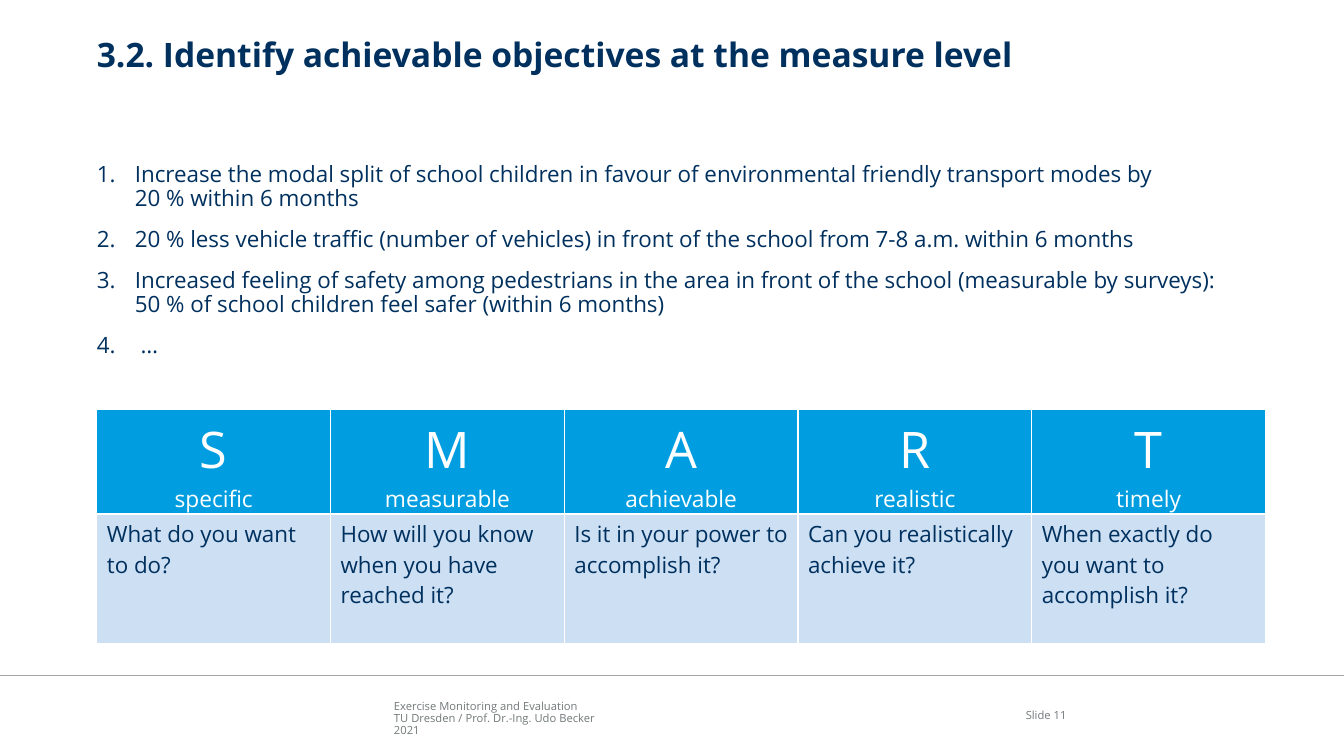
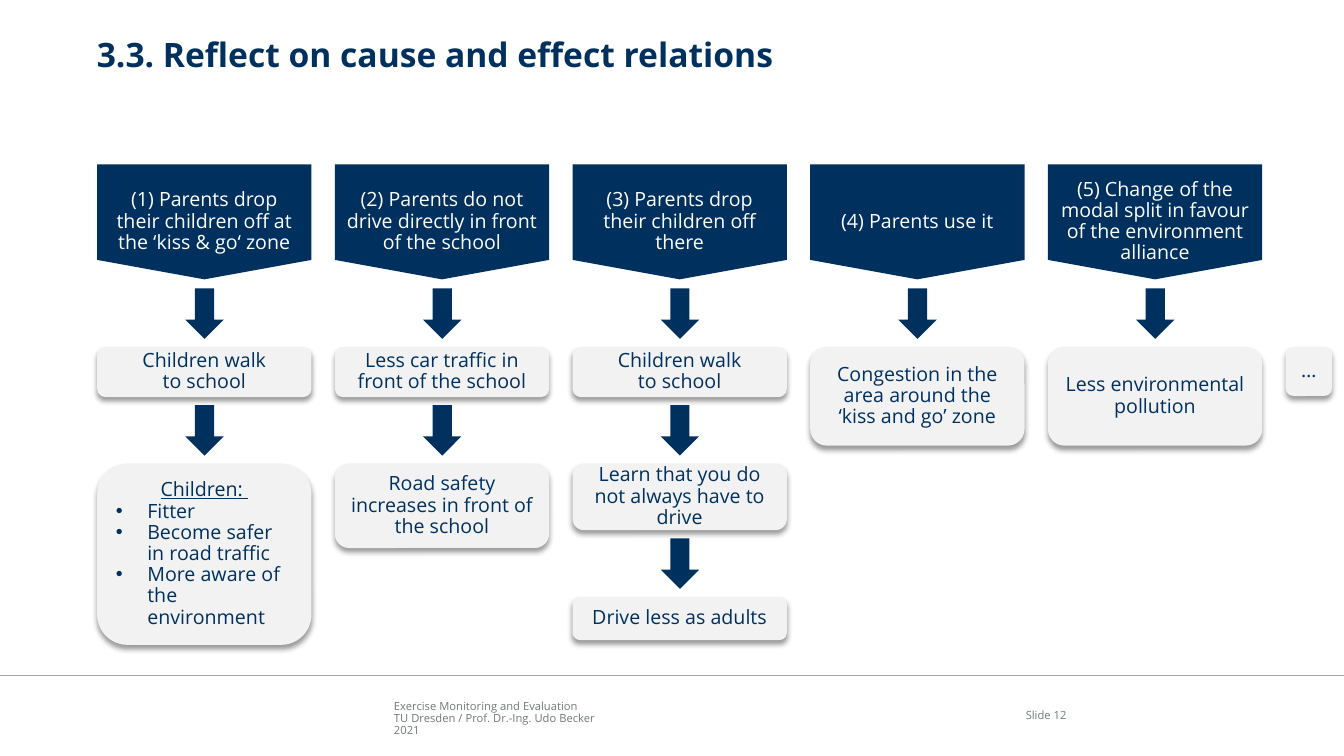
from copy import deepcopy

from lxml import etree
from pptx import Presentation
from pptx.dml.color import RGBColor
from pptx.enum.shapes import MSO_CONNECTOR, MSO_SHAPE
from pptx.enum.text import MSO_ANCHOR, PP_ALIGN
from pptx.oxml import parse_xml
from pptx.oxml.ns import qn
from pptx.util import Cm, Pt

ROUND = MSO_SHAPE.ROUNDED_RECTANGLE
ARROW = MSO_SHAPE.DOWN_ARROW
LINE = MSO_CONNECTOR.STRAIGHT
LEFT, MID, RIGHT = PP_ALIGN.LEFT, PP_ALIGN.CENTER, PP_ALIGN.RIGHT
TOP, CENTRE, LOW = MSO_ANCHOR.TOP, MSO_ANCHOR.MIDDLE, MSO_ANCHOR.BOTTOM

FONT = "Open Sans"
NAVY, BLUE, PALE = "00305E", "009EE0", "CCDFF3"
WHITE, LIGHT, RULE, GREY = "FFFFFF", "F2F2F2", "A6A6A6", "727879"
NS = 'xmlns:a="http://schemas.openxmlformats.org/drawingml/2006/main"'
WIDE, HIGH = 33.87, 19.05
EDGE, SPAN = 2.44, 29.39

FOOT = "Exercise Monitoring and Evaluation\nTU Dresden / Prof. Dr.-Ing. Udo Becker\n2021"
GOALS = (
    "Increase the modal split of school children in favour of environmental "
    "friendly transport modes by\v20 % within 6 months\n"
    "20 % less vehicle traffic (number of vehicles) in front of the school "
    "from 7-8 a.m. within 6 months\n"
    "Increased feeling of safety among pedestrians in the area in front of the "
    "school (measurable by surveys):\v50 % of school children feel safer (within 6 months)\n"
    " …"
)
SMART = [
    ("S", "specific", "What do you want to do?"),
    ("M", "measurable", "How will you know when you have reached it?"),
    ("A", "achievable", "Is it in your power to accomplish it?"),
    ("R", "realistic", "Can you realistically achieve it?"),
    ("T", "timely", "When exactly do you want to accomplish it?"),
]
GAINS = "Fitter\nBecome safer in road traffic\nMore aware of the environment"
STEPS = [8.74, 11.68, 15.04]
CHAINS = [
    ("(1) Parents drop their children off at the ‘kiss & go‘ zone",
     [("Children walk\vto school", 1.27), ("Children: ", 4.57, GAINS)]),
    ("(2) Parents do not drive directly in front of the school",
     [("Less car traffic in front of the school", 1.27),
      ("Road safety increases in front of the school", 2.13)]),
    ("(3) Parents drop their children off there",
     [("Children walk\vto school", 1.27),
      ("Learn that you do not always have to drive", 1.68),
      ("Drive less as adults", 1.09)]),
    ("(4) Parents use it",
     [("Congestion in the area around the ‘kiss and go’ zone", 2.49)]),
    ("(5) Change of the modal split in favour\vof the environment alliance",
     [("Less environmental pollution", 2.49)]),
]


def tint(code):
    return RGBColor.from_string(code)


def put(frame, text, size=14, color=NAVY, bold=False, under=False, align=LEFT,
        space=0.9, gap=0, mark=None, inset=0):
    for line in text.split("\n"):
        first = not frame.text
        para = frame.paragraphs[0] if first else frame.add_paragraph()
        para.text = line
        para.alignment, para.line_spacing = align, space
        para.space_before = Pt(0 if first else gap)
        if mark:
            props = para._p.get_or_add_pPr()
            props.set("marL", str(Cm(inset)))
            props.set("indent", str(-Cm(inset)))
            for item in mark:
                props.append(parse_xml(f"<a:{item} {NS}/>"))
        for run in para.runs:
            font = run.font
            font.name, font.size, font.bold = FONT, Pt(size), bold
            font.underline = under
            font.color.rgb = tint(color)
        for stop in para._p.findall(qn("a:br")):
            stop.insert(0, deepcopy(para.runs[0]._r.rPr))


def label(slide, box, text, anchor=TOP, **form):
    frame = slide.shapes.add_textbox(*map(Cm, box)).text_frame
    frame.word_wrap, frame.vertical_anchor = True, anchor
    frame.margin_left = frame.margin_right = 0
    frame.margin_top = frame.margin_bottom = 0
    put(frame, text, **form)


def paint(shape, color):
    shape.shadow.inherit = False
    shape.fill.solid()
    shape.fill.fore_color.rgb = tint(color)
    shape.line.fill.background()
    shape.text_frame.word_wrap = True
    shape.text_frame.vertical_anchor = CENTRE
    return shape


def base(deck, title, page):
    slide = deck.slides.add_slide(deck.slide_layouts[6])
    label(slide, (EDGE, 0.97, SPAN, 1.9), title, size=24, bold=True)
    rule = slide.shapes.add_connector(LINE, 0, Cm(17.02), Cm(WIDE), Cm(17.02))
    rule.line.color.rgb, rule.line.width = tint(RULE), Pt(1)
    etree.SubElement(rule._element.spPr, qn("a:effectLst"))
    label(slide, (9.93, 17.55, 14.4, 1.02), FOOT, LOW, size=8, color=GREY)
    label(slide, (24.92, 17.53, 1.96, 1.02), f"Slide {page}", CENTRE,
          size=8, color=GREY, align=RIGHT)
    return slide


def border(cell):
    props = cell._tc.get_or_add_tcPr()
    for side in "LRTB":
        props.append(parse_xml(
            f'<a:ln{side} {NS} w="{Pt(1)}"><a:solidFill><a:srgbClr val="{WHITE}"/>'
            f"</a:solidFill></a:ln{side}>"))


def grid(slide, left, top, width, rows):
    table = slide.shapes.add_table(
        2, len(SMART), Cm(left), Cm(top), Cm(width), Cm(sum(rows))).table
    table.first_row = table.horz_banding = False
    for row, high in zip(table.rows, rows):
        row.height = Cm(high)
    for col, (sign, word, ask) in enumerate(SMART):
        table.columns[col].width = Cm(width / len(SMART))
        head, body = table.cell(0, col), table.cell(1, col)
        for cell, color in ((head, BLUE), (body, PALE)):
            border(cell)
            cell.fill.solid()
            cell.fill.fore_color.rgb = tint(color)
        for text, size in ((sign, 36), (word, 16.2)):
            put(head.text_frame, text, size=size, color=WHITE, align=MID, space=1)
        put(body.text_frame, ask, size=16, space=1)


def banner(slide, left, top, width, text):
    side, tip = 2.41, 2.9
    points = [(width, 0), (width, side), (width / 2, tip), (0, side)]
    form = slide.shapes.build_freeform(Cm(left), Cm(top))
    form.add_line_segments([(Cm(left + x), Cm(top + y)) for x, y in points])
    shape = paint(form.convert_to_shape(), NAVY)
    put(shape.text_frame, text, color=WHITE, align=MID)


def card(slide, left, top, width, high, text, points=None):
    shape = slide.shapes.add_shape(ROUND, *map(Cm, (left, top, width, high)))
    paint(shape, LIGHT)
    shape._element.spPr.find(qn("a:effectLst")).append(parse_xml(
        f'<a:outerShdw {NS} blurRad="{Pt(4)}" dist="{Pt(3)}" dir="5400000" '
        'rotWithShape="0"><a:srgbClr val="000000"><a:alpha val="40000"/>'
        "</a:srgbClr></a:outerShdw>"))
    put(shape.text_frame, text, align=MID, under=bool(points))
    if points:
        put(shape.text_frame, points, inset=0.79,
            mark=['buFont typeface="Arial"', 'buChar char="•"'])


def chain(slide, left, top, width, text, cards):
    banner(slide, left, top, width, text)
    for step, (words, high, *points) in zip(STEPS, cards):
        arrow = slide.shapes.add_shape(
            ARROW, Cm(left + width / 2 - 0.48), Cm(step - 1.47), Cm(0.97), Cm(1.27))
        paint(arrow, NAVY)
        card(slide, left, step, width, high, words, *points)


def main():
    deck = Presentation()
    deck.slide_width, deck.slide_height = Cm(WIDE), Cm(HIGH)

    slide = base(deck, "3.2. Identify achievable objectives at the measure level", 11)
    label(slide, (EDGE, 4.11, SPAN, 5.9), GOALS, size=16, gap=12, inset=0.96,
          mark=['buFont typeface="+mj-lt"', 'buAutoNum type="arabicPeriod"'])
    grid(slide, EDGE, 10.31, 29.45, (2.64, 3.28))

    slide = base(deck, "3.3. Reflect on cause and effect relations", 12)
    left, pitch = 2.45, 5.99
    for col, (text, cards) in enumerate(CHAINS):
        chain(slide, left + col * pitch, 4.14, 5.4, text, cards)
    card(slide, left + len(CHAINS) * pitch, STEPS[0], 1.17, 1.24, "…")

    deck.save("out.pptx")


if __name__ == "__main__":
    main()
